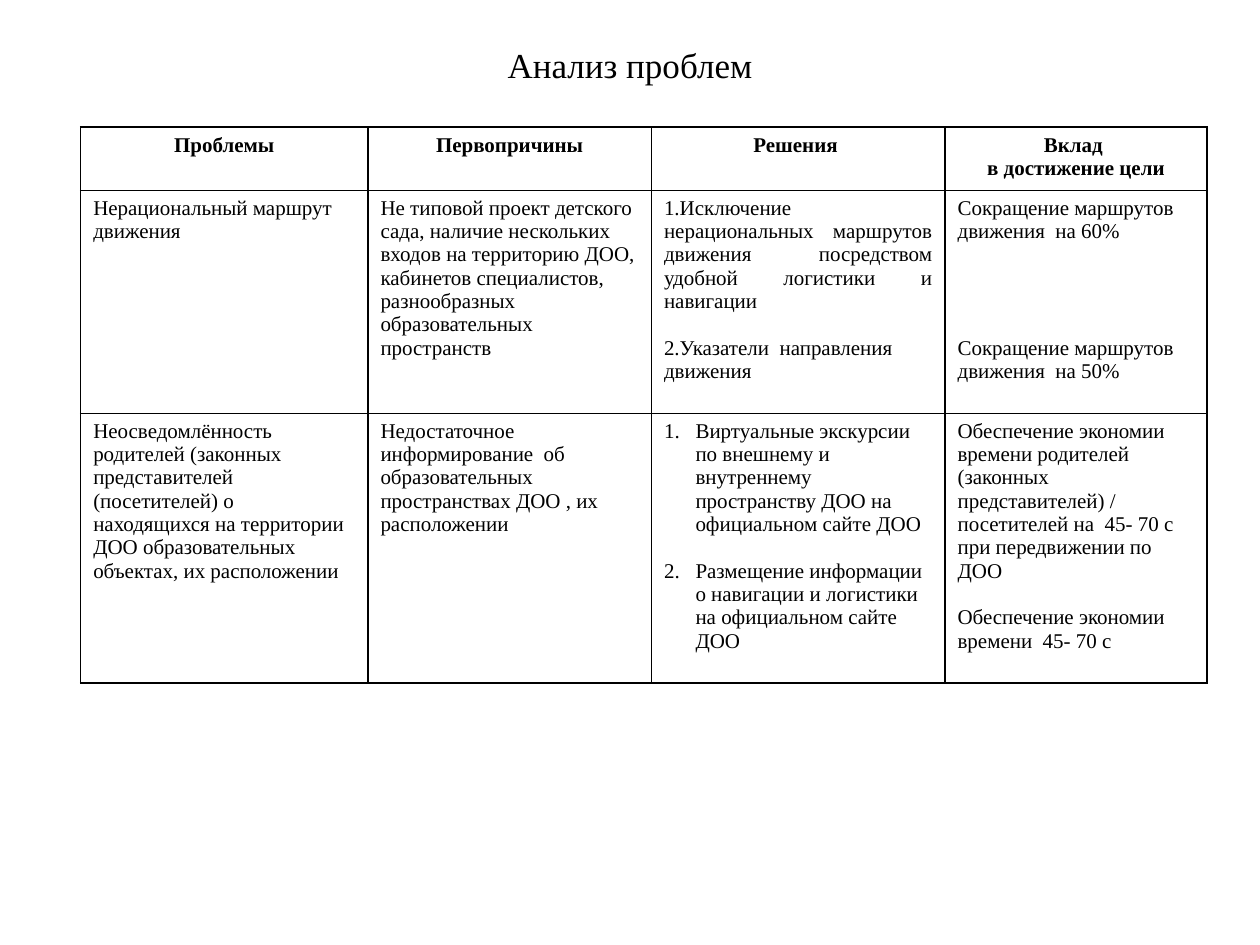
from dataclasses import dataclass

from lxml.etree import SubElement
from pptx import Presentation
from pptx.dml.color import RGBColor
from pptx.enum.text import MSO_ANCHOR, PP_ALIGN
from pptx.oxml import parse_xml
from pptx.oxml.ns import nsdecls, qn
from pptx.util import Inches, Pt


@dataclass(frozen=True)
class Theme:
    font: str = "Times New Roman"
    ink: str = "000000"
    paper: str = "FFFFFF"
    title: float = 20
    body: float = 12
    line: float = 13.3  # height of one body line, in points
    rule: float = 1


@dataclass(frozen=True)
class Para:
    text: str
    align: PP_ALIGN = PP_ALIGN.LEFT
    gap: int = 0  # free lines above
    number: bool = False


class Deck:
    def __init__(self, theme):
        self.theme = theme
        self.file = Presentation()
        self.file.slide_width, self.file.slide_height = Inches(10), Inches(7.5)
        self.slide = self.file.slides.add_slide(self.file.slide_layouts[6])

    def style(self, para, size, bold=False):
        for run in para.runs:
            font = run.font
            font.name, font.size, font.bold = self.theme.font, Pt(size), bold
            font.color.rgb = RGBColor.from_string(self.theme.ink)

    def title(self, text, left, top, width, height):
        box = self.slide.shapes.add_textbox(
            Inches(left), Inches(top), Inches(width), Inches(height))
        frame = box.text_frame
        frame.word_wrap = True
        frame.vertical_anchor = MSO_ANCHOR.MIDDLE
        frame.text = text
        para = frame.paragraphs[0]
        para.alignment = PP_ALIGN.CENTER
        self.style(para, self.theme.title)

    def table(self, left, top, cols, rows, cells):
        shape = self.slide.shapes.add_table(
            len(rows), len(cols), Inches(left), Inches(top),
            Inches(sum(cols)), Inches(sum(rows)))
        grid = shape.table
        grid.first_row = grid.horz_banding = False
        for col, width in zip(grid.columns, cols):
            col.width = Inches(width)
        for row, height in zip(grid.rows, rows):
            row.height = Inches(height)
        for r, line in enumerate(cells):
            for c, paras in enumerate(line):
                self.cell(grid.cell(r, c), paras, bold=r == 0)

    def cell(self, cell, paras, bold):
        cell.fill.solid()
        cell.fill.fore_color.rgb = RGBColor.from_string(self.theme.paper)
        self.border(cell)
        frame = cell.text_frame
        frame.text = "\n".join(item.text for item in paras)
        for para, item in zip(frame.paragraphs, paras):
            para.alignment = item.align
            if item.gap:
                para.space_before = Pt(item.gap * self.theme.line)
            if item.number:
                self.number(para)
            self.style(para, self.theme.body, bold)

    def border(self, cell):
        props = cell._tc.get_or_add_tcPr()
        for at, side in enumerate("LRTB"):
            props.insert(at, parse_xml(
                f'<a:ln{side} {nsdecls("a")} w="{Pt(self.theme.rule)}">'
                f'<a:solidFill><a:srgbClr val="{self.theme.ink}"/></a:solidFill>'
                f'</a:ln{side}>'))

    def number(self, para):
        props = para._p.get_or_add_pPr()
        props.set("marL", str(Inches(0.25)))
        props.set("indent", str(Inches(-0.25)))
        SubElement(props, qn("a:buAutoNum"), type="arabicPeriod")


def head(*lines):
    return [Para(line, PP_ALIGN.CENTER) for line in lines]


CELLS = [
    [head("Проблемы"), head("Первопричины"), head("Решения "),
     head("Вклад ", "в достижение цели")],
    [[Para("Нерациональный маршрут движения")],
     [Para("Не типовой проект детского сада, наличие нескольких входов на "
           "территорию ДОО, кабинетов специалистов, разнообразных "
           "образовательных пространств")],
     [Para("1.Исключение нерациональных маршрутов движения посредством "
           "удобной логистики и навигации", PP_ALIGN.JUSTIFY),
      Para("2.Указатели  направления движения", gap=1)],
     [Para("Сокращение маршрутов движения  на 60%"),
      Para("Сокращение маршрутов движения  на 50%", gap=4)]],
    [[Para("Неосведомлённость родителей (законных представителей "
           "(посетителей) о находящихся на территории ДОО образовательных "
           "объектах, их расположении")],
     [Para("Недостаточное информирование  об образовательных "
           "пространствах ДОО , их расположении")],
     [Para("Виртуальные экскурсии по внешнему и внутреннему пространству "
           "ДОО на официальном сайте ДОО", number=True),
      Para("Размещение информации о навигации и логистики на официальном "
           "сайте ДОО", gap=1, number=True)],
     [Para("Обеспечение экономии времени родителей (законных "
           "представителей) / посетителей на  45- 70 с при передвижении "
           "по ДОО"),
      Para("Обеспечение экономии времени  45- 70 с", gap=1)]],
]


def main():
    deck = Deck(Theme())
    deck.title("Анализ проблем", 0.5, 0, 9, 1.02)
    deck.table(0.64, 1.01, [2.28, 2.25, 2.33, 2.08], [0.47, 1.77, 2.14], CELLS)
    deck.file.save("out.pptx")


if __name__ == "__main__":
    main()
